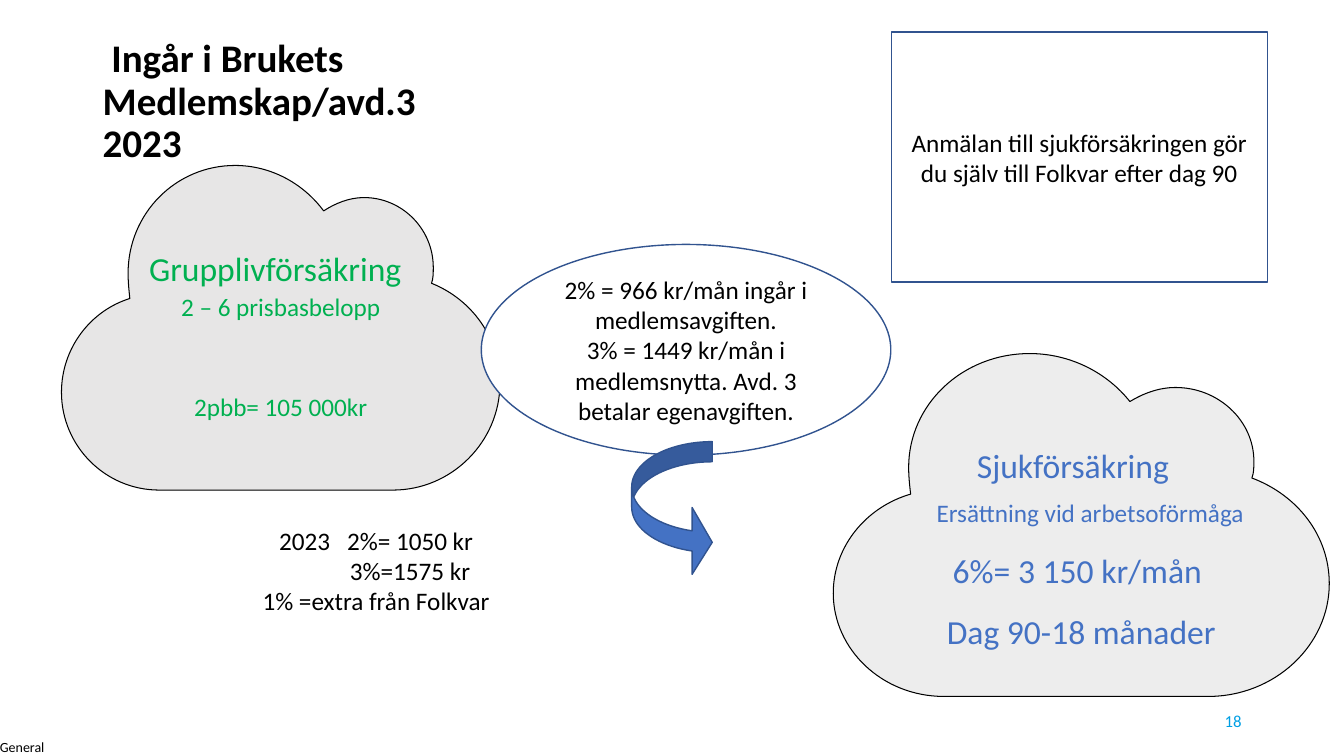
from lxml.etree import SubElement
from pptx import Presentation
from pptx.dml.color import RGBColor
from pptx.enum.shapes import MSO_SHAPE
from pptx.enum.text import MSO_ANCHOR, PP_ALIGN
from pptx.oxml.ns import qn
from pptx.util import Cm, Pt

BLACK, GREEN, BLUE, NAVY = "000000", "00B050", "4472C4", "31538F"


def style(shape, fill, line, width):
    shape.shadow.inherit = False
    shape.fill.solid()
    shape.fill.fore_color.rgb = RGBColor.from_string(fill)
    shape.line.color.rgb = RGBColor.from_string(line)
    shape.line.width = Pt(width)


def write(shape, paragraphs, color=BLACK, align=PP_ALIGN.CENTER, anchor=MSO_ANCHOR.MIDDLE,
          top=0.13, side=0.25, spacing=1.0, bold=False):
    """Each paragraph: text, size, space before (pt), left and right margin (cm)."""
    frame = shape.text_frame
    frame.word_wrap = True
    frame.vertical_anchor = anchor
    frame.margin_left = frame.margin_right = Cm(side)
    frame.margin_top, frame.margin_bottom = Cm(top), Cm(0)
    if anchor == MSO_ANCHOR.MIDDLE:
        frame.margin_bottom = Cm(top)
    for number, (text, size, before, left, right) in enumerate(paragraphs):
        para = frame.add_paragraph() if number else frame.paragraphs[0]
        para.alignment = align
        para.line_spacing = spacing
        para.space_before = Pt(before)
        properties = para._p.get_or_add_pPr()
        properties.set("marL", str(Cm(left)))
        properties.set("marR", str(Cm(right)))
        span = para.add_run()
        span.text = text
        span.font.name = "Calibri"
        span.font.size = Pt(size)
        span.font.bold = bold
        span.font.color.rgb = RGBColor.from_string(color)


deck = Presentation()
deck.slide_width, deck.slide_height = Cm(33.87), Cm(19.05)
page = deck.slides.add_slide(deck.slide_layouts[6])
shapes = page.shapes

# Classification label, title and page number
box = shapes.add_textbox(Cm(0), Cm(18.62), Cm(1.22), Cm(0.43))
write(box, [("General", 10, 0, 0, 0)], align=PP_ALIGN.LEFT, anchor=MSO_ANCHOR.TOP,
      top=0, side=0)

title = shapes.add_textbox(Cm(2.34), Cm(0.86), Cm(9.47), Cm(3.5))
write(title, [("Ingår i Brukets Medlemskap/avd.3 2023", 27.9, 0, 0, 0)],
      align=PP_ALIGN.LEFT, anchor=MSO_ANCHOR.TOP, spacing=0.9, bold=True)
title.text_frame.paragraphs[0]._p.pPr.set("indent", str(Cm(0.22)))

box = shapes.add_textbox(Cm(23.92), Cm(17.65), Cm(7.62), Cm(1.02))
write(box, [("18", 12, 0, 0, 0)], color="009FE4", align=PP_ALIGN.RIGHT)

# Cloud outline in percent of width and height: two control points and an end per curve
CLOUD_START = (39.6, 0)
CLOUD_CURVES = [
    ((47.8, 0), (55.2, 5.6), (59.8, 14)),
    ((62.3, 11.8), (65.5, 9.9), (69, 9.9)),
    ((77.7, 9.9), (84.8, 19.6), (84.8, 31.4)),
    ((84.8, 33.2), (84.8, 34.8), (84.4, 36.3)),
    ((93.6, 41.3), (100, 53.1), (100, 67.1)),
    ((100, 85.1), (89, 100), (75.6, 100)),
    ((75.6, 100), (75.6, 100), (22.3, 100)),
    ((9.9, 100), (0, 86.3), (0, 69.9)),
    ((0, 56.2), (6.7, 44.7), (15.6, 41)),
    ((15.4, 38.5), (15.2, 35.9), (15.2, 33.2)),
    ((15.2, 14.9), (26, 0), CLOUD_START),
]

# Clouds: left, top, width, height, fill, text colour, top inset, paragraphs
clouds = [
    (1.55, 4.17, 11.05, 8.18, "E7E6E6", GREEN, 1.97, [
        ("Grupplivförsäkring", 24, 0, 0, 0.27),
        ("2 – 6 prisbasbelopp", 18, 0, 0, 0),
        ("2pbb= 105 000kr", 18, 48, 0, 0)]),
    (21, 8.91, 12.5, 8.64, "EDEDED", BLUE, 2.21, [
        ("Sjukförsäkring", 24, 0, 0, 0.42),
        ("Ersättning vid arbetsoförmåga", 18, 6.5, 0.45, 0),
        ("6%= 3 150 kr/mån", 24, 13, 0, 0.2),
        ("Dag 90-18 månader", 24, 12, 0, 0)]),
]
for left, top, width, height, fill, color, inset, paragraphs in clouds:
    start, *ends = [(Cm(left + width * x / 100), Cm(top + height * y / 100))
                    for x, y in [CLOUD_START] + [curve[-1] for curve in CLOUD_CURVES]]
    builder = shapes.build_freeform(*start)
    builder.add_line_segments(ends, close=True)
    cloud = builder.convert_to_shape()
    # Bend each straight segment into its curve
    for segment, curve in zip(list(cloud._element.iter(qn("a:lnTo"))), CLOUD_CURVES):
        bend = segment.getparent().makeelement(qn("a:cubicBezTo"))
        for x, y in curve:
            SubElement(bend, qn("a:pt"), x=str(Cm(width * x / 100)), y=str(Cm(height * y / 100)))
        segment.getparent().replace(segment, bend)
    style(cloud, fill, BLACK, 0.75)
    write(cloud, paragraphs, color, anchor=MSO_ANCHOR.TOP, top=inset, spacing=1.1)

# Fee ellipse and notice box
panels = [
    (MSO_SHAPE.OVAL, 12.13, 6.16, 10.32, 5.31, [
        "2% = 966 kr/mån ingår i medlemsavgiften.",
        "3% = 1449 kr/mån i medlemsnytta. Avd. 3 betalar egenavgiften."]),
    (MSO_SHAPE.RECTANGLE, 22.46, 0.81, 9.48, 6.3, [
        "Anmälan till sjukförsäkringen gör du själv till Folkvar efter dag 90"]),
]
for kind, left, top, width, height, texts in panels:
    panel = shapes.add_shape(kind, Cm(left), Cm(top), Cm(width), Cm(height))
    style(panel, "FFFFFF", NAVY, 1)
    write(panel, [(text, 18, 0, 0, 0) for text in texts])

# Curved arrow
arrow = shapes.add_shape(MSO_SHAPE.CURVED_RIGHT_ARROW, Cm(15.92), Cm(11.13), Cm(2.03), Cm(3.38))
style(arrow, BLUE, NAVY, 1)
for index, value in enumerate((0.25, 0.83, 0.25)):
    arrow.adjustments[index] = value

# Amounts for 2023, the year being the list number
amounts = shapes.add_textbox(Cm(3.23), Cm(13.1), Cm(12.5), Cm(2.57))
write(amounts, [("2%= 1050 kr", 18, 0, 1.71, 0),
                ("3%=1575 kr", 18, 0, 1.71, 0),
                ("1% =extra från Folkvar", 18, 0, 0, 0)], anchor=MSO_ANCHOR.TOP)
properties = amounts.text_frame.paragraphs[0]._p.pPr
properties.set("indent", str(-Cm(1.71)))
bullet_color = SubElement(properties, qn("a:buClr"))
SubElement(bullet_color, qn("a:srgbClr"), val=BLACK)
SubElement(properties, qn("a:buFont"), typeface="Calibri")
SubElement(properties, qn("a:buAutoNum"), type="arabicPlain", startAt="2023")

deck.save("out.pptx")
